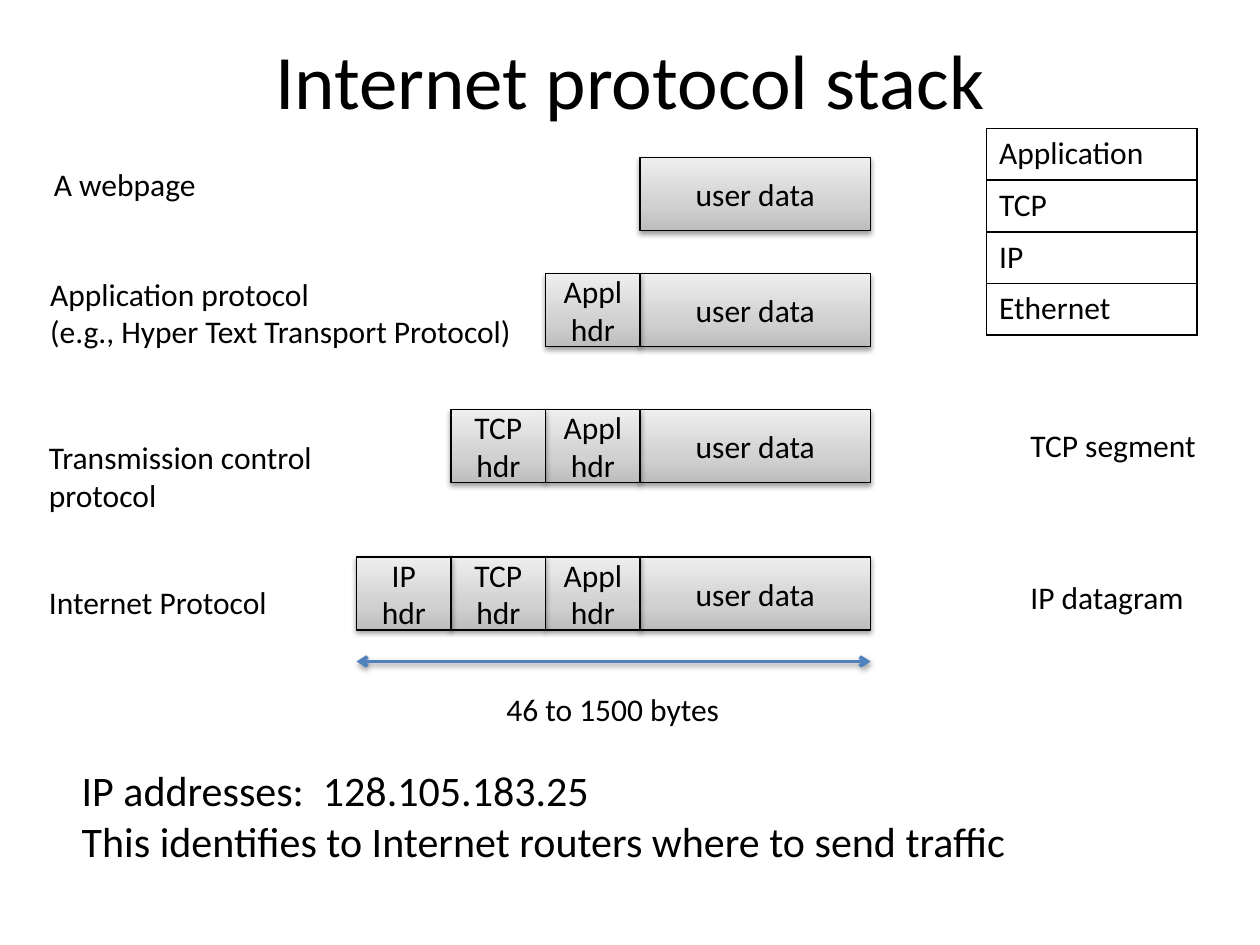
import pptx
import pptx.dml.color
import pptx.enum.shapes
import pptx.enum.text
import pptx.oxml
import pptx.oxml.ns
import pptx.util

Inches, Pt = pptx.util.Inches, pptx.util.Pt
RGBColor = pptx.dml.color.RGBColor
PP_ALIGN = pptx.enum.text.PP_ALIGN
ANCHOR = pptx.enum.text.MSO_ANCHOR

BLACK = RGBColor(0x00, 0x00, 0x00)
BLUE = RGBColor(0x4F, 0x81, 0xBD)
GREYS = [(0, RGBColor(0xBD, 0xBD, 0xBD)),
         (35, RGBColor(0xD1, 0xD1, 0xD1)),
         (100, RGBColor(0xEE, 0xEE, 0xEE))]


def add_xml(parent, xml):
    """Append a drawing element, given as text, to parent."""
    head, sep, tail = xml.partition(">")
    slash = "/" if head.endswith("/") else ""
    ns = pptx.oxml.ns.nsdecls("a")
    el = pptx.oxml.parse_xml(f"{head.rstrip('/')} {ns}{slash}{sep}{tail}")
    parent.append(el)
    return el


class Diagram:
    """Holds the text style and the slide being drawn."""

    def __init__(self, slide):
        self.slide = slide
        self.font = {"name": "Calibri", "size": Pt(18)}

    def put_text(self, tf, text, align=PP_ALIGN.LEFT, **changes):
        for i, line in enumerate(text.split("\n")):
            p = tf.add_paragraph() if i else tf.paragraphs[0]
            p.alignment = align
            r = p.add_run()
            r.text = line
            for name, value in {**self.font, **changes}.items():
                setattr(r.font, name, value)
            r.font.color.rgb = BLACK

    def title(self, text, x, y, w, h):
        sp = self.slide.shapes.title
        sp.left, sp.top, sp.width, sp.height = map(Inches, (x, y, w, h))
        sp.text_frame.vertical_anchor = ANCHOR.MIDDLE
        self.put_text(sp.text_frame, text, PP_ALIGN.CENTER, size=Pt(44))

    def label(self, text, x, y, w, h=0.4, **changes):
        sp = self.slide.shapes.add_textbox(*map(Inches, (x, y, w, h)))
        tf = sp.text_frame
        tf.word_wrap = False
        tf.auto_size = pptx.enum.text.MSO_AUTO_SIZE.SHAPE_TO_FIT_TEXT
        self.put_text(tf, text, **changes)

    def shadow(self, sp_pr):
        effects = add_xml(sp_pr, "<a:effectLst/>")
        add_xml(effects, '<a:outerShdw blurRad="40000" dist="20000" dir="5400000" '
                'rotWithShape="0"><a:srgbClr val="000000">'
                '<a:alpha val="38000"/></a:srgbClr></a:outerShdw>')

    def box(self, text, x, y, w, h):
        sp = self.slide.shapes.add_shape(
            pptx.enum.shapes.MSO_SHAPE.RECTANGLE, *map(Inches, (x, y, w, h)))
        sp.fill.gradient()
        sp.fill.gradient_angle = 90
        stops = sp.element.spPr.find(".//" + pptx.oxml.ns.qn("a:gsLst"))
        for stop in list(stops):
            stops.remove(stop)
        for pos, color in GREYS:
            add_xml(stops, f'<a:gs pos="{pos * 1000}"><a:srgbClr val="{color}"/></a:gs>')
        sp.line.color.rgb = BLACK
        sp.line.width = Pt(0.75)
        self.shadow(sp.element.spPr)
        tf = sp.text_frame
        tf.word_wrap = True
        tf.vertical_anchor = ANCHOR.MIDDLE
        self.put_text(tf, text, PP_ALIGN.CENTER)

    def double_arrow(self, x1, x2, y):
        sp = self.slide.shapes.add_connector(
            pptx.enum.shapes.MSO_CONNECTOR.STRAIGHT, *map(Inches, (x1, y, x2, y)))
        sp.line.color.rgb = BLUE
        sp.line.width = Pt(2)
        sp_pr = sp.element.spPr
        for end in ("headEnd", "tailEnd"):
            add_xml(sp_pr.find(pptx.oxml.ns.qn("a:ln")), f'<a:{end} type="arrow"/>')
        self.shadow(sp_pr)

    def table(self, rows, x, y, w, row_h):
        table = self.slide.shapes.add_table(
            len(rows), 1, *map(Inches, (x, y, w, row_h * len(rows)))).table
        table.first_row = table.horz_banding = False
        for row, text in enumerate(rows):
            cell = table.cell(row, 0)
            self.put_text(cell.text_frame, text)
            tc_pr = cell._tc.get_or_add_tcPr()
            for side in "LRTB":
                add_xml(tc_pr, f'<a:ln{side} w="12700"><a:solidFill>'
                        f'<a:srgbClr val="{BLACK}"/></a:solidFill></a:ln{side}>')
            cell.fill.background()


def main():
    prs = pptx.Presentation()
    prs.slide_width, prs.slide_height = Inches(10), Inches(7.5)
    d = Diagram(prs.slides.add_slide(prs.slide_layouts[5]))

    d.title("Internet protocol stack", 0.5, 0, 9, 1.25)
    d.table(["Application", "TCP", "IP", "Ethernet"], 7.83, 1.02, 1.67, 0.41)

    # Packets: each layer puts one more header to the left of the data
    data_x, data_w, hdr_w, box_h = 5.08, 1.83, 0.75, 0.58
    headers = ["Appl hdr", "TCP hdr", "IP hdr"]
    for count, y in enumerate([1.25, 2.17, 3.25, 4.42]):
        d.box("user data", data_x, y, data_w, box_h)
        for i, header in enumerate(headers[:count], 1):
            d.box(header, data_x - i * hdr_w, y, hdr_w, box_h)

    # Packet names and size
    d.label("TCP segment", 8.08, 3.33, 1.53)
    d.label("IP datagram", 8.08, 4.54, 1.44)
    d.double_arrow(data_x - len(headers) * hdr_w, data_x + data_w, 5.25)
    d.label("46 to 1500 bytes", 3.92, 5.43, 1.91)

    # Layer names
    d.label("A webpage", 0.33, 1.26, 1.34)
    d.label("Application protocol\n(e.g., Hyper Text Transport Protocol)",
            0.3, 2.13, 3.95, 0.71)
    d.label("Transmission control\nprotocol", 0.29, 3.43, 2.34, 0.71)
    d.label("Internet Protocol", 0.29, 4.58, 1.96)

    # Closing note
    d.label("IP addresses:  128.105.183.25\n"
            "This identifies to Internet routers where to send traffic",
            0.55, 6.02, 7.65, 0.91, size=Pt(24))

    prs.save("out.pptx")


if __name__ == "__main__":
    main()
